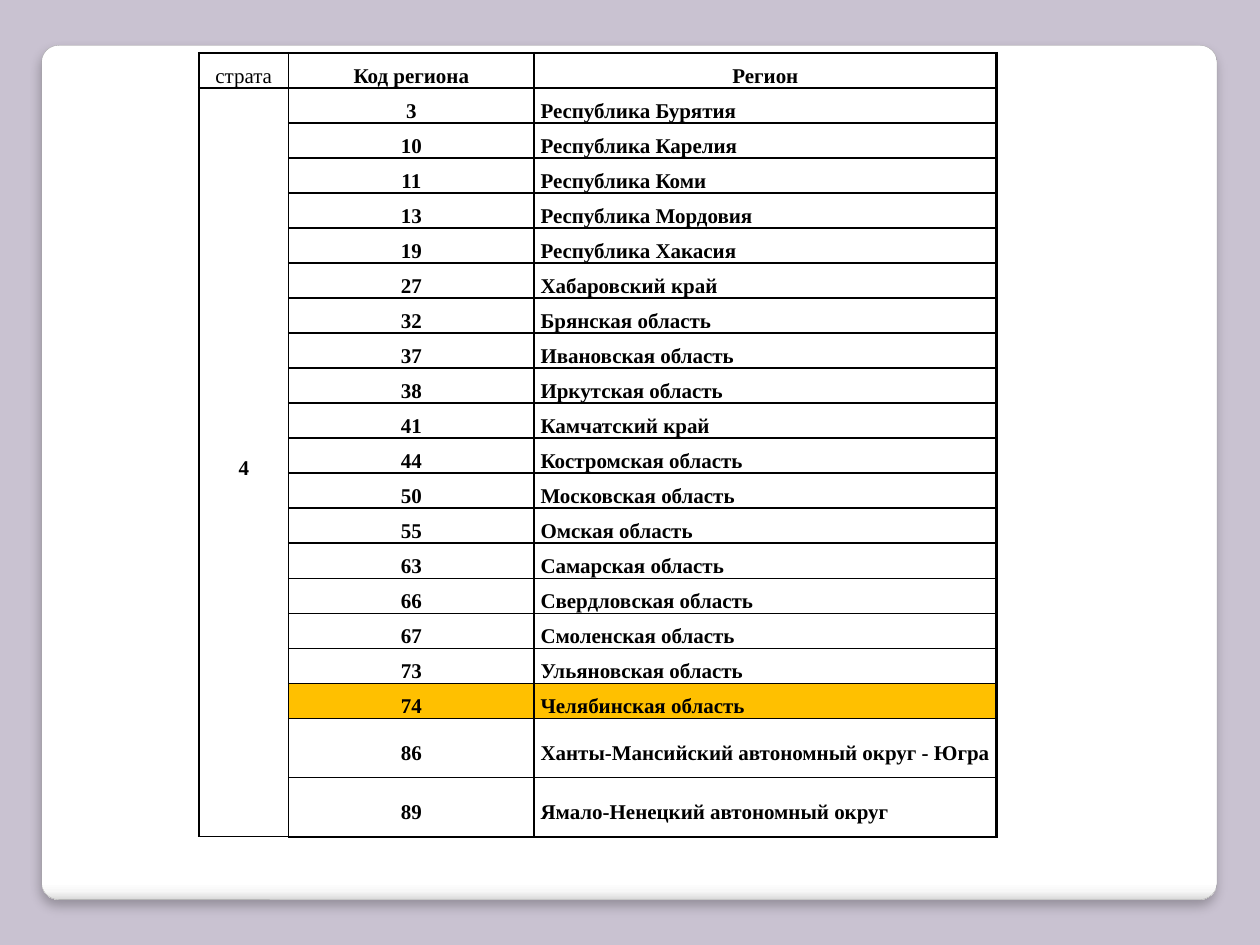
from typing import NamedTuple

import pptx
import pptx.dml.color
import pptx.enum.shapes
import pptx.enum.text
import pptx.oxml
import pptx.oxml.ns
import pptx.util

RGBColor = pptx.dml.color.RGBColor
Inches = pptx.util.Inches
Pt = pptx.util.Pt
ALIGN = pptx.enum.text.PP_ALIGN

LILAC = RGBColor(0xC9, 0xC2, 0xD1)
GREY = RGBColor(0xA4, 0xA4, 0xA4)
BLACK = RGBColor(0, 0, 0)
AMBER = RGBColor(0xFF, 0xC0, 0x00)
CARD_STOPS = [
    (0, RGBColor(0xFF, 0xFF, 0xFF)),
    (98, RGBColor(0xFF, 0xFF, 0xFF)),
    (99, RGBColor(0xF7, 0xF7, 0xF7)),
    (100, RGBColor(0xDA, 0xDA, 0xDA)),
]

FONT = "Times New Roman"
THIN, THICK = 1, 1.5
COLUMN_WIDTHS = (0.71, 1.95, 3.67)
ROW_HEIGHT, TALL_ROW_HEIGHT = 0.24, 0.47
TALL_ROWS = 2
HEADERS = ("страта", "Код региона", "Регион")
STRATUM = "4"


class Region(NamedTuple):
    code: int
    name: str
    highlighted: bool = False


REGIONS = [
    Region(3, "Республика Бурятия"),
    Region(10, "Республика Карелия"),
    Region(11, "Республика Коми"),
    Region(13, "Республика Мордовия"),
    Region(19, "Республика Хакасия"),
    Region(27, "Хабаровский край"),
    Region(32, "Брянская область"),
    Region(37, "Ивановская область"),
    Region(38, "Иркутская область"),
    Region(41, "Камчатский край"),
    Region(44, "Костромская область"),
    Region(50, "Московская область"),
    Region(55, "Омская область"),
    Region(63, "Самарская область"),
    Region(66, "Свердловская область"),
    Region(67, "Смоленская область"),
    Region(73, "Ульяновская область"),
    Region(74, "Челябинская область", highlighted=True),
    Region(86, "Ханты-Мансийский автономный округ - Югра"),
    Region(89, "Ямало-Ненецкий автономный округ"),
]


def add_xml(parent, xml: str) -> None:
    """Append a DrawingML element, declaring its namespace."""
    tag, rest = xml.split(" ", 1)
    ns = pptx.oxml.ns.nsdecls("a")
    parent.append(pptx.oxml.parse_xml(f"{tag} {ns} {rest}"))


def add_card(s) -> None:
    """Draw the white rounded panel with its gradient edge and soft shadow."""
    sp = s.shapes.add_shape(
        pptx.enum.shapes.MSO_SHAPE.ROUNDED_RECTANGLE,
        Inches(0.33), Inches(0.36), Inches(9.33), Inches(6.78))
    sp.adjustments[0] = 0.02
    stops = "".join(
        f'<a:gs pos="{pos * 1000}"><a:srgbClr val="{color}"/></a:gs>'
        for pos, color in CARD_STOPS)
    add_xml(sp.element.spPr,
            f'<a:gradFill rotWithShape="1"><a:gsLst>{stops}</a:gsLst>'
            '<a:lin ang="5400000" scaled="0"/></a:gradFill>')
    sp.line.color.rgb = GREY
    sp.line.width = Pt(0.16)
    add_xml(sp.element.spPr,
            f'<a:effectLst ><a:outerShdw blurRad="{Pt(6)}" dist="{Pt(4)}" '
            'dir="5400000" algn="tl" rotWithShape="0"><a:srgbClr val="000000">'
            '<a:alpha val="25000"/></a:srgbClr></a:outerShdw></a:effectLst>')


def write(cell, text: str, *, bold: bool = True, align=ALIGN.CENTER) -> None:
    cell.margin_left = cell.margin_right = Inches(0.05)
    cell.margin_top = cell.margin_bottom = 0
    cell.vertical_anchor = pptx.enum.text.MSO_ANCHOR.MIDDLE
    p = cell.text_frame.paragraphs[0]
    p.alignment = align
    p.line_spacing = 1.5
    r = p.add_run()
    r.text = text
    r.font.name = FONT
    r.font.size = Pt(12)
    r.font.bold = bold
    r.font.color.rgb = BLACK


def set_borders(cell, *, left: float, right: float, top: float, bottom: float) -> None:
    tcPr = cell._tc.get_or_add_tcPr()
    for side, width in zip("LRTB", (left, right, top, bottom)):
        add_xml(tcPr,
                f'<a:ln{side} w="{Pt(width)}"><a:solidFill>'
                f'<a:srgbClr val="{BLACK}"/></a:solidFill></a:ln{side}>')


def add_region_table(s) -> None:
    n_rows, n_cols = len(REGIONS) + 1, len(COLUMN_WIDTHS)
    height = Inches(6.65)
    frame = s.shapes.add_table(
        n_rows, n_cols, Inches(1.58), Inches(0.42),
        Inches(sum(COLUMN_WIDTHS)), height)
    table = frame.table
    table.first_row = table.horz_banding = False
    for column, width in zip(table.columns, COLUMN_WIDTHS):
        column.width = Inches(width)
    for i, row in enumerate(table.rows):
        tall = i >= n_rows - TALL_ROWS
        row.height = Inches(TALL_ROW_HEIGHT if tall else ROW_HEIGHT)
    frame.height = height

    last_row, last_col = n_rows - 1, n_cols - 1
    for i in range(n_rows):
        for j in range(n_cols):
            cell = table.cell(i, j)
            stratum_header = (i, j) == (0, 0)
            set_borders(
                cell,
                left=THICK if j == 0 else THIN,
                right=THICK if j == last_col else THIN,
                top=THICK if i == 0 or (i, j) == (1, 0) else THIN,
                bottom=THICK if i == last_row or stratum_header else THIN)
            if i and j and REGIONS[i - 1].highlighted:
                cell.fill.solid()
                cell.fill.fore_color.rgb = AMBER
            else:
                cell.fill.background()

    for j, header in enumerate(HEADERS):
        write(table.cell(0, j), header, bold=j > 0)
    table.cell(1, 0).merge(table.cell(last_row, 0))
    write(table.cell(1, 0), STRATUM)
    for i, region in enumerate(REGIONS, start=1):
        write(table.cell(i, 1), str(region.code))
        write(table.cell(i, 2), region.name, align=ALIGN.LEFT)


def main() -> None:
    prs = pptx.Presentation()
    prs.slide_width, prs.slide_height = Inches(10), Inches(7.5)
    s = prs.slides.add_slide(prs.slide_layouts[6])
    s.background.fill.solid()
    s.background.fill.fore_color.rgb = LILAC
    add_card(s)
    add_region_table(s)
    prs.save("out.pptx")


if __name__ == "__main__":
    main()
